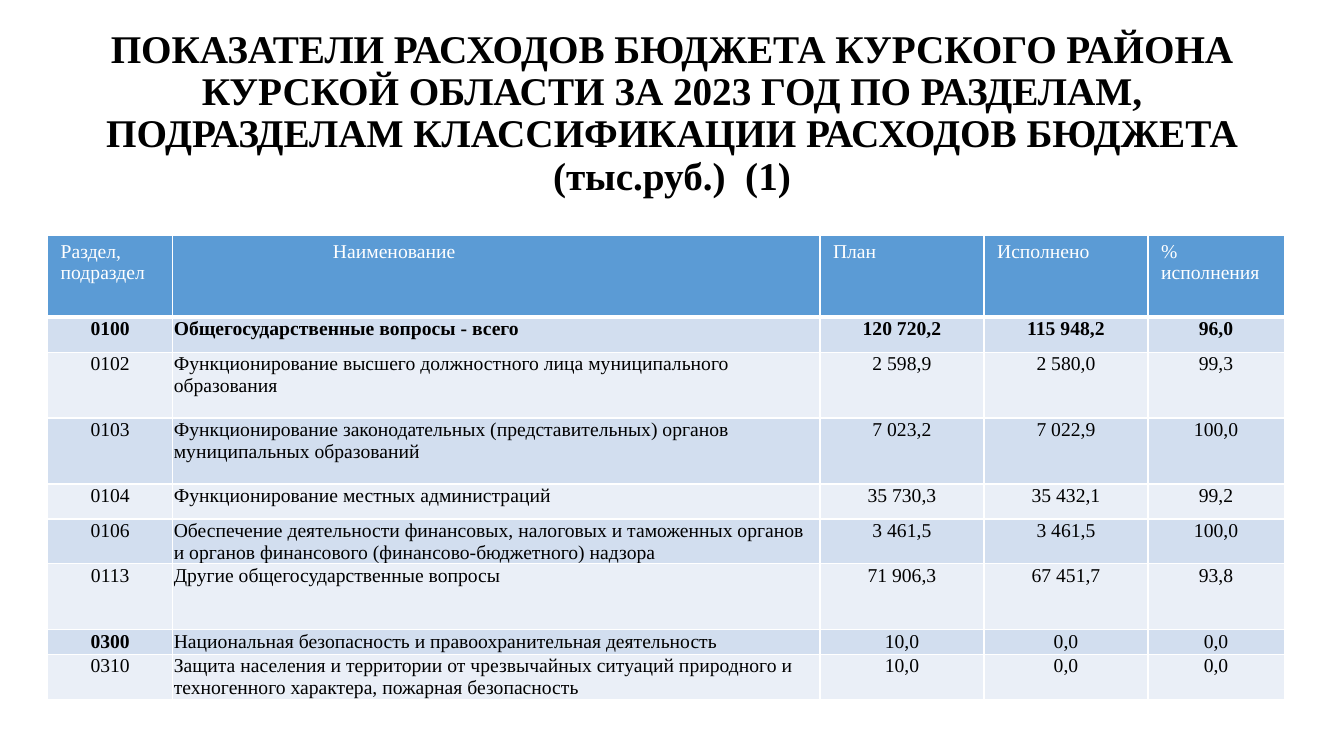
from lxml import etree
from pptx import Presentation
from pptx.dml.color import RGBColor
from pptx.enum import text as t
from pptx.oxml import ns
from pptx.util import Pt

# Content
TITLE = ("ПОКАЗАТЕЛИ РАСХОДОВ БЮДЖЕТА КУРСКОГО РАЙОНА КУРСКОЙ ОБЛАСТИ ЗА 2023 ГОД "
         "ПО РАЗДЕЛАМ, ПОДРАЗДЕЛАМ КЛАССИФИКАЦИИ РАСХОДОВ БЮДЖЕТА (тыс.руб.)  (1)")
HEADERS = ["Раздел, подраздел", "Наименование", "План", "Исполнено", "%\nисполнения"]
ROWS = [
    ["0100", "Общегосударственные вопросы - всего", "120 720,2", "115 948,2", "96,0"],
    ["0102", "Функционирование высшего должностного лица муниципального образования",
     "2 598,9", "2 580,0", "99,3"],
    ["0103", "Функционирование законодательных (представительных) органов "
     "муниципальных образований", "7 023,2", "7 022,9", "100,0"],
    ["0104", "Функционирование местных администраций", "35 730,3", "35 432,1", "99,2"],
    ["0106", "Обеспечение деятельности финансовых, налоговых и таможенных органов "
     "и органов финансового (финансово-бюджетного) надзора", "3 461,5", "3 461,5", "100,0"],
    ["0113", "Другие общегосударственные вопросы", "71 906,3", "67 451,7", "93,8"],
    ["0300", "Национальная безопасность и правоохранительная деятельность",
     "10,0", "0,0", "0,0"],
    ["0310", "Защита населения и территории от чрезвычайных ситуаций природного и "
     "техногенного характера, пожарная безопасность", "10,0", "0,0", "0,0"],
]
BOLD_ROWS = {"0100"}
BOLD_CODES = {"0100", "0300"}

# Layout in points
SLIDE_SIZE = (960, 540)
TITLE_BOX = (66, 16.5, 828, 130)
TABLE_ORIGIN = (34, 168.3)
COLUMN_WIDTHS = [89.5, 462.2, 117.2, 117.2, 97.2]
ROW_HEIGHTS = [58.3, 25, 47.1, 47.1, 25, 32.1, 47.1, 17.6, 32]
NAME_COLUMN = 1
NAME_HEADER_INDENT = 105
HEADER_INSETS = (9.4, 3.6, 9.4, 3.6)
BODY_INSETS = (0.7, 0.7, 0.7, 0)

THEME = {
    "font": "Times New Roman", "title_size": 28, "table_size": 14,
    "ink": "000000", "paper": "FFFFFF", "header": "5B9BD5",
    "bands": ("D2DEEF", "EAEFF7"),
}


def write_text(frame, content, *, size, color="ink", bold=False,
               align=t.PP_ALIGN.LEFT, spacing=None, indent=0):
    for index, line in enumerate(content.split("\n")):
        paragraph = frame.paragraphs[0] if index == 0 else frame.add_paragraph()
        paragraph.alignment = align
        if spacing:
            paragraph.line_spacing = spacing
        if indent:
            paragraph._p.get_or_add_pPr().set("marL", str(Pt(indent)))
        run = paragraph.add_run()
        run.text = line
        run.font.name = THEME["font"]
        run.font.size = Pt(THEME[size])
        run.font.bold = bold
        run.font.color.rgb = RGBColor.from_string(THEME[color])


def style_cell(cell, fill, insets, top=1, bottom=1):
    properties = cell._tc.get_or_add_tcPr()
    for side, width in (("L", 1), ("R", 1), ("T", top), ("B", bottom)):
        line = etree.SubElement(properties, ns.qn(f"a:ln{side}"), w=str(Pt(width)))
        solid = etree.SubElement(line, ns.qn("a:solidFill"))
        etree.SubElement(solid, ns.qn("a:srgbClr"), val=THEME["paper"])
    cell.fill.solid()
    cell.fill.fore_color.rgb = RGBColor.from_string(fill)
    cell.margin_left, cell.margin_top, cell.margin_right, cell.margin_bottom = map(Pt, insets)
    cell.vertical_anchor = t.MSO_ANCHOR.TOP


def add_title(slide):
    frame = slide.shapes.add_textbox(*map(Pt, TITLE_BOX)).text_frame
    frame.word_wrap = True
    frame.vertical_anchor = t.MSO_ANCHOR.MIDDLE
    write_text(frame, TITLE, size="title_size", bold=True,
               align=t.PP_ALIGN.CENTER, spacing=0.9)


def add_budget_table(slide):
    size = (sum(COLUMN_WIDTHS), sum(ROW_HEIGHTS))
    shape = slide.shapes.add_table(len(ROW_HEIGHTS), len(COLUMN_WIDTHS),
                                   *map(Pt, TABLE_ORIGIN + size))
    table = shape.table
    table.first_row = table.horz_banding = False
    for column, width in zip(table.columns, COLUMN_WIDTHS):
        column.width = Pt(width)
    for row, height in zip(table.rows, ROW_HEIGHTS):
        row.height = Pt(height)

    # Header row
    for column, label in enumerate(HEADERS):
        cell = table.cell(0, column)
        style_cell(cell, THEME["header"], HEADER_INSETS, bottom=3)
        write_text(cell.text_frame, label, size="table_size", color="paper",
                   indent=NAME_HEADER_INDENT if column == NAME_COLUMN else 0)

    # Banded body rows
    for index, values in enumerate(ROWS):
        code = values[0]
        for column, value in enumerate(values):
            cell = table.cell(index + 1, column)
            is_name = column == NAME_COLUMN
            style_cell(cell, THEME["bands"][index % 2], BODY_INSETS,
                       top=3 if index == 0 else 1)
            write_text(cell.text_frame, value, size="table_size",
                       bold=code in BOLD_ROWS or value in BOLD_CODES,
                       align=t.PP_ALIGN.LEFT if is_name else t.PP_ALIGN.CENTER,
                       spacing=Pt(15.6) if is_name else None)


def main():
    presentation = Presentation()
    presentation.slide_width, presentation.slide_height = map(Pt, SLIDE_SIZE)
    slide = presentation.slides.add_slide(presentation.slide_layouts[6])
    add_title(slide)
    add_budget_table(slide)
    presentation.save("out.pptx")


if __name__ == "__main__":
    main()
